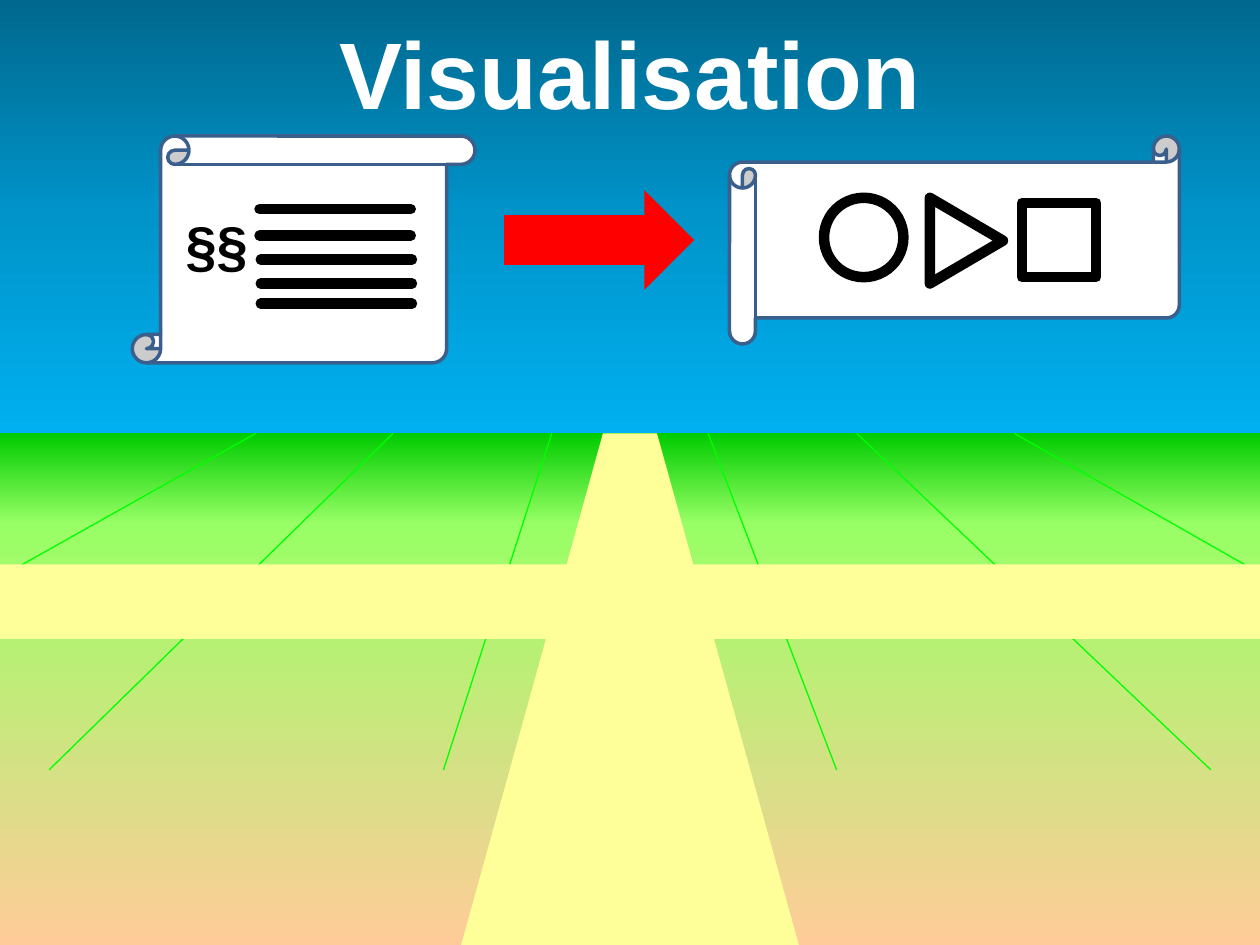
import copy

import pptx
import pptx.dml.color
import pptx.enum.shapes
import pptx.enum.text
import pptx.oxml.ns
import pptx.util
from lxml import etree

Inches, Pt = pptx.util.Inches, pptx.util.Pt
KIND = pptx.enum.shapes.MSO_SHAPE
qn = pptx.oxml.ns.qn

HEX = {
    "ink": "000000", "paper": "FFFFFF", "edge": "3A5F8C", "arrow": "FF0000",
    "road": "FFFF99", "furrow": "00FF00", "far": "00CC00", "mid": "99FF66",
    "near": "FFCC99", "high": "00688E", "blue": "0094CA", "low": "00B0F0",
}


def rgb(name):
    return pptx.dml.color.RGBColor.from_string(HEX[name])


def stroke(line, color, width, cap=False):
    line.color.rgb = rgb(color)
    line.width = Pt(width)
    if cap:
        ln = line.fill._xPr
        ln.set("cap", "rnd")
        etree.SubElement(ln, qn("a:round"))


def fade(fill, colors):
    """Fill from top to bottom with evenly spaced colours."""
    fill.gradient()
    fill.gradient_angle = 270
    stops = fill._fill._gradFill.find(qn("a:gsLst"))
    for _ in colors[2:]:
        stops.append(copy.deepcopy(stops[0]))
    for i, (stop, color) in enumerate(zip(fill.gradient_stops, colors)):
        stop.color.rgb = rgb(color)
        stop.position = i / (len(colors) - 1)


def shape(parent, kind, x, y, w, h, fill=None, line=None, width=2):
    item = parent.add_shape(kind, Inches(x), Inches(y), Inches(w), Inches(h))
    item.shadow.inherit = False
    if isinstance(fill, list):
        fade(item.fill, fill)
    elif fill:
        item.fill.solid()
        item.fill.fore_color.rgb = rgb(fill)
    else:
        item.fill.background()
    if line:
        stroke(item.line, line, width, cap=not fill)
    else:
        item.line.fill.background()
    return item


def rule(parent, x1, y1, x2, y2, color, width, cap=False):
    item = parent.add_connector(
        pptx.enum.shapes.MSO_CONNECTOR.STRAIGHT,
        Inches(x1), Inches(y1), Inches(x2), Inches(y2))
    stroke(item.line, color, width, cap)
    etree.SubElement(item._element.spPr, qn("a:effectLst"))


def label(parent, text, x, y, w, h, size, color):
    box = parent.add_textbox(Inches(x), Inches(y), Inches(w), Inches(h))
    box.text_frame.word_wrap = True
    para = box.text_frame.paragraphs[0]
    para.text = text
    para.alignment = pptx.enum.text.PP_ALIGN.CENTER
    para.font.name = "Arial"
    para.font.size = Pt(size)
    para.font.bold = True
    para.font.color.rgb = rgb(color)


def field(parent, x, y, w, h):
    """Meadow in two bands, with furrows running towards the horizon."""
    group = parent.add_group_shape().shapes
    band = 0.72
    shape(group, KIND.RECTANGLE, x, y + band, w, h - band, ["mid", "near"])
    shape(group, KIND.RECTANGLE, x, y, w, band, ["far", "mid"])
    furrows = [(5.62, 6.64, 2.67), (8.05, 10, 1.11), (6.8, 9.61, 2.67),
               (4.38, 3.52, 2.67), (3.12, 0.39, 2.67), (2.03, 0, 1.14)]
    for top, end, drop in furrows:
        rule(group, x + top, y, x + end, y + drop, "furrow", 0.75)


def roads(parent, x, y, w, h):
    """Road to the horizon and the road across it."""
    base = 2.68
    lane = shape(parent, KIND.TRAPEZOID, x + (w - base) / 2, y, base, h, "road")
    lane.adjustments[0] = 0.42
    shape(parent, KIND.RECTANGLE, x, y + 1.04, w, 0.59, "road")


def source(parent, x, y, w, h):
    """Scroll with written paragraphs."""
    shape(parent, KIND.VERTICAL_SCROLL, x, y, w, h, "paper", "edge")
    rows = [(1.01, 0.58), (1.01, 0.79), (1.02, 0.98), (1.02, 1.17), (1.02, 1.33)]
    for left, top in rows:
        rule(parent, x + left, y + top, x + left + 1.2, y + top, "ink", 6, True)
    label(parent, "§§", x + 0.17, y + 0.54, 1, 0.64, 32, "ink")


def result(parent, x, y, w, h):
    """Scroll with drawn symbols."""
    shape(parent, KIND.HORIZONTAL_SCROLL, x, y, w, h, "paper", "edge")
    marks = [(KIND.OVAL, 0.75, 0.49, 0.63, 0.63, 0),
             (KIND.ISOSCELES_TRIANGLE, 1.54, 0.54, 0.68, 0.58, 90),
             (KIND.RECTANGLE, 2.32, 0.53, 0.59, 0.59, 0)]
    for kind, left, top, wide, high, turn in marks:
        mark = shape(parent, kind, x + left, y + top, wide, high,
                     line="ink", width=6)
        mark.rotation = turn


def main():
    deck = pptx.Presentation()
    deck.slide_width, deck.slide_height = Inches(10), Inches(7.5)
    parts = deck.slides.add_slide(deck.slide_layouts[6]).shapes

    # Landscape
    sky = 3.44
    field(parts, 0, sky, 10, 7.5 - sky)
    shape(parts, KIND.RECTANGLE, 0, 0, 10, sky, ["high", "blue", "low"])
    roads(parts, 0, sky, 10, 7.5 - sky)

    # From text to symbols
    source(parts, 1.05, 1.08, 2.72, 1.8)
    shape(parts, KIND.RIGHT_ARROW, 4, 1.51, 1.51, 0.79, "arrow")
    result(parts, 5.79, 1.08, 3.57, 1.65)

    # Title
    label(parts, "Visualisation", 0, 0.07, 10, 1.01, 54, "paper")
    deck.save("out.pptx")


if __name__ == "__main__":
    main()
